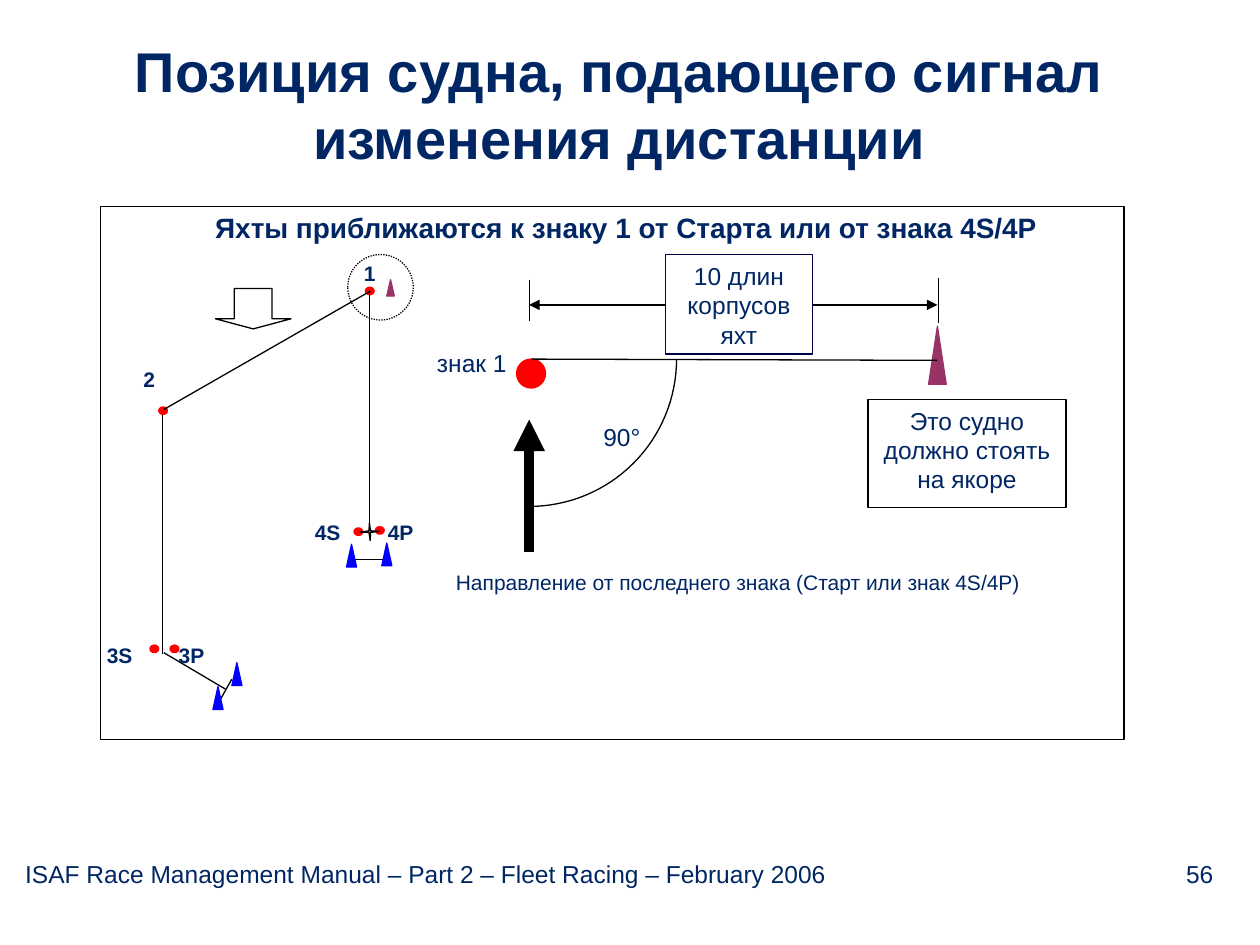
from dataclasses import dataclass
from math import cos, pi, sin

from lxml.etree import SubElement
from pptx import Presentation
from pptx.dml.color import RGBColor
from pptx.enum.dml import MSO_LINE
from pptx.enum.shapes import MSO_CONNECTOR, MSO_SHAPE
from pptx.enum.text import MSO_ANCHOR, PP_ALIGN
from pptx.oxml.ns import qn
from pptx.util import Inches, Pt

COLORS = {
    "text": "002664", "line": "000000", "frame": "00004C", "paper": "FFFFFF",
    "mark": "FF0000", "signal": "993366", "boat": "0000FF",
}
FONT = "Arial"
CELL = 0.1  # inches; the slide is a grid of 100 columns by 75 rows


@dataclass
class Box:
    left: float
    top: float
    width: float
    height: float

    def inner(self, left, top, width, height):
        """A box whose place is counted from this box's corner."""
        return Box(self.left + left, self.top + top, width, height)

    def point(self, column, row):
        return grid(self.left + column), grid(self.top + row)

    def lengths(self):
        return [grid(n) for n in (self.left, self.top, self.width, self.height)]


def grid(cells):
    return Inches(cells * CELL)


def color(name):
    return RGBColor.from_string(COLORS[name])


def write(shape, text, size=14, bold=False, align=PP_ALIGN.LEFT,
          anchor=MSO_ANCHOR.TOP, right_tab=None):
    frame = shape.text_frame
    frame.word_wrap = True
    frame.vertical_anchor = anchor
    para = frame.paragraphs[0]
    para.alignment = align
    if right_tab:
        stops = SubElement(para._p.get_or_add_pPr(), qn("a:tabLst"))
        SubElement(stops, qn("a:tab"), pos=str(grid(right_tab)), algn="r")
    span = para.add_run()
    span.text = text
    span.font.name = FONT
    span.font.size = Pt(size)
    span.font.bold = bold
    span.font.color.rgb = color("text")


def label(page, box, text, **style):
    shape = page.shapes.add_textbox(*box.lengths())
    write(shape, text, **style)
    return shape


def paint(shape, fill=None, line="line"):
    shape.shadow.inherit = False
    if fill:
        shape.fill.solid()
        shape.fill.fore_color.rgb = color(fill)
    else:
        shape.fill.background()
    shape.line.color.rgb = color(line)
    shape.line.width = Pt(0.75)
    return shape


def draw(page, kind, box, fill=None, line=None):
    shape = page.shapes.add_shape(kind, *box.lengths())
    return paint(shape, fill, line or fill or "line")


def connect(page, box, start, end, width=0.75, arrows=()):
    link = page.shapes.add_connector(
        MSO_CONNECTOR.STRAIGHT, *box.point(*start), *box.point(*end))
    link.line.color.rgb = color("line")
    link.line.width = Pt(width)
    for side in arrows:
        SubElement(link.line._get_or_add_ln(), qn(f"a:{side}"), type="triangle")
    SubElement(link._element.spPr, qn("a:effectLst"))


def add_title(page, box):
    label(page, box, "Позиция судна, подающего сигнал изменения дистанции", size=32,
          bold=True, align=PP_ALIGN.CENTER, anchor=MSO_ANCHOR.MIDDLE)


def add_footer(page, box):
    shape = label(
        page, box,
        "ISAF Race Management Manual – Part 2 – Fleet Racing – February 2006\t56",
        right_tab=94.3)
    frame = shape.text_frame
    frame.margin_left = frame.margin_right = frame.margin_top = frame.margin_bottom = 0


def add_panel(page, box):
    draw(page, MSO_SHAPE.RECTANGLE, box)
    label(page, box.inner(8.1, -0.2, 72.7, 5.2),
          "Яхты приближаются к знаку 1 от Старта или от знака 4S/4P",
          size=16, bold=True)


def add_course(page, box):
    # Circle around mark 1, and the wind
    circle = draw(page, MSO_SHAPE.OVAL, box.inner(19.6, 3.8, 5.2, 5.2))
    circle.line.dash_style = MSO_LINE.ROUND_DOT
    wind = draw(page, MSO_SHAPE.DOWN_ARROW, box.inner(9.1, 6.5, 6, 3.2), "paper", "line")
    wind.adjustments[1] = 0.25

    # Start and finish lines
    for start, end in (((19.9, 28), (22.6, 28)), ((10.4, 37.5), (9.5, 39.1))):
        connect(page, box, start, end)

    # Marks and gates
    for column, row in ((21, 6.4), (4.6, 15.9), (3.9, 34.8), (5.5, 34.8),
                        (20.1, 25.5), (21.8, 25.4)):
        draw(page, MSO_SHAPE.OVAL, box.inner(column, row, 0.7, 0.6), "mark")
    star = draw(page, MSO_SHAPE.STAR_4_POINT, box.inner(20.6, 25.1, 1.5, 1.4),
                "paper", "line")
    star.adjustments[0] = 0.06
    star.rotation = 357.8

    # Boats
    for column, row in ((22.3, 26.7), (19.5, 26.8), (10.4, 36.2), (8.9, 38.1)):
        draw(page, MSO_SHAPE.FLOWCHART_EXTRACT, box.inner(column, row, 0.8, 1.8), "boat")
    draw(page, MSO_SHAPE.ISOSCELES_TRIANGLE, box.inner(22.7, 5.8, 0.6, 1.3), "signal")

    # Legs of the course
    for start, end in (((5, 35.4), (9.9, 38.3)), ((5, 16.1), (21.4, 6.7)),
                       ((21.3, 6.7), (21.3, 25.7)), ((4.9, 16.5), (4.9, 35.5))):
        connect(page, box, start, end)

    # Names of the marks
    for name, column, row in (("1", 19.9, 3.8), ("2", 2.4, 12.2), ("3S", -0.5, 34.1),
                              ("3P", 5.2, 34.1), ("4S", 16, 24.3), ("4P", 21.8, 24.3)):
        label(page, box.inner(column, row, 5, 3.2), name, size=12, bold=True)


def add_quarter_arc(page, box, center, radius, steps=32):
    turns = [pi / 2 * step / steps for step in range(steps + 1)]
    points = [box.point(center[0] + radius * sin(turn), center[1] + radius * cos(turn))
              for turn in turns]
    outline = page.shapes.build_freeform(*points[0])
    outline.add_line_segments(points[1:], close=False)
    paint(outline.convert_to_shape())


def add_position(page, box):
    # Mark 1 and the signal boat
    draw(page, MSO_SHAPE.OVAL, box.inner(6, 8.5, 2.3, 2.3), "mark")
    label(page, box.inner(-1.3, 7.1, 10, 3.8), "знак 1")
    draw(page, MSO_SHAPE.ISOSCELES_TRIANGLE, box.inner(38.7, 5.9, 1.4, 4.6), "signal")

    # Right angle to the course from the last mark
    connect(page, box, (7, 23.8), (7, 13.3), width=6, arrows=["tailEnd"])
    connect(page, box, (7.2, 8.5), (39.4, 8.6))
    add_quarter_arc(page, box, (7, 8.5), 11.7)
    label(page, box.inner(11.9, 13, 9.1, 4.6), "90°")
    label(page, box.inner(0.2, 24.7, 49.7, 3.4),
          "Направление от последнего знака (Старт или знак 4S/4P)", size=12)

    # Distance between them
    connect(page, box, (7, 2.2), (7, 5.5))
    connect(page, box, (39.5, 2.1), (39.5, 5.6))
    connect(page, box, (7, 4.2), (39.4, 4.2), arrows=["headEnd", "tailEnd"])

    # Notes
    for place, line, text in (
            ((17.8, 0.2, 11.7, 7.9), "frame", "10 длин корпусов яхт"),
            ((33.9, 11.7, 15.7, 8.6), "line", "Это судно должно стоять на якоре")):
        note = draw(page, MSO_SHAPE.RECTANGLE, box.inner(*place), "paper", line)
        write(note, text, align=PP_ALIGN.CENTER)


def main():
    deck = Presentation()
    deck.slide_width, deck.slide_height = grid(100), grid(75)
    page = deck.slides.add_slide(deck.slide_layouts[6])
    panel = Box(8, 16.4, 81.2, 42.3)
    add_footer(page, Box(2, 68.2, 96.1, 2.3))
    add_title(page, Box(7.5, 3.3, 83.3, 9.8))
    add_panel(page, panel)
    add_position(page, panel.inner(27, 3.6, 54.2, 38.7))
    add_course(page, panel.inner(0, 0, 27, 42.3))
    deck.save("out.pptx")


if __name__ == "__main__":
    main()
